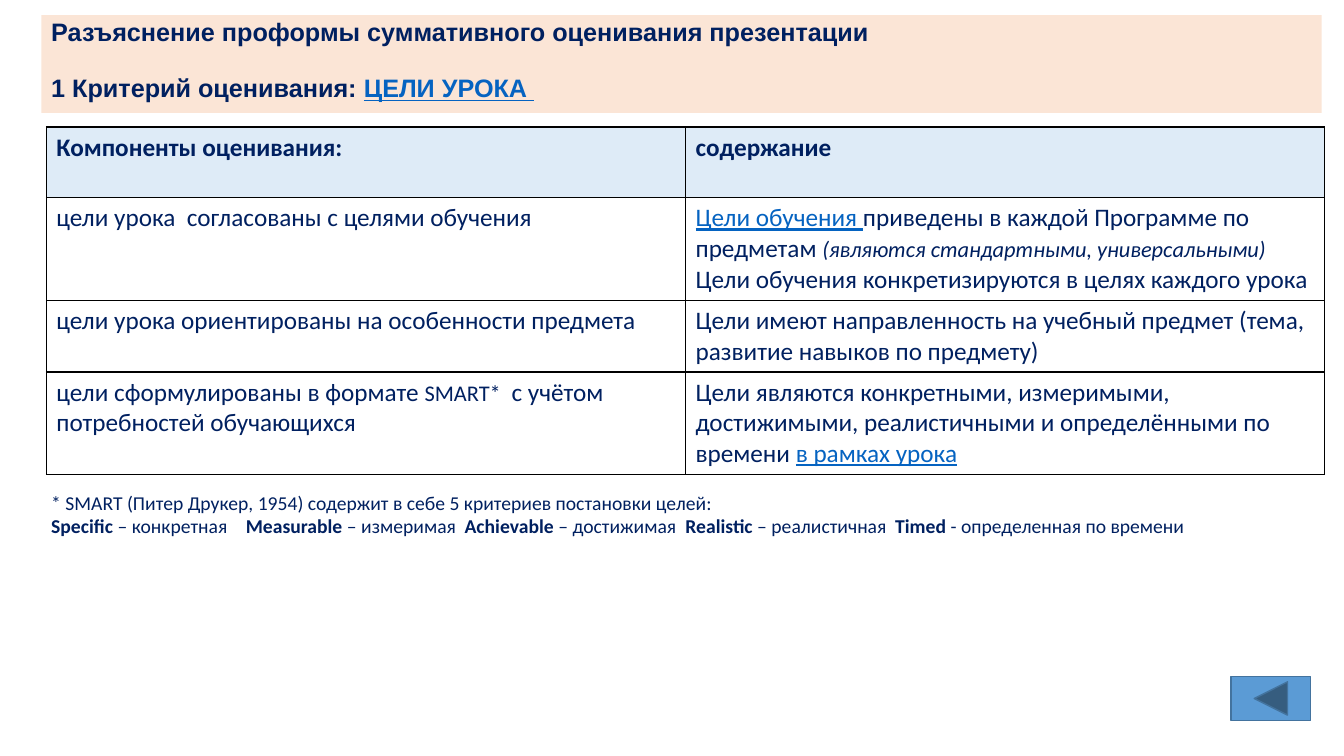
import lxml.etree
import pptx
import pptx.dml.color
import pptx.enum.shapes
import pptx.enum.text
import pptx.oxml.ns
import pptx.util

Inches = pptx.util.Inches
Pt = pptx.util.Pt
COLORS = {
    "navy": "002060", "link": "0563C1", "peach": "FBE5D6", "header": "DEEBF7",
    "button": "5B9BD5", "button_line": "43739E", "border": "000000",
}
BOLD = {"bold": True}
LINK = {"color": "link", "underline": True}


def rgb(name):
    return pptx.dml.color.RGBColor.from_string(COLORS[name])


def add_child(parent, tag, **attributes):
    return lxml.etree.SubElement(parent, pptx.oxml.ns.qn(tag), **attributes)


class SlideBuilder:
    def __init__(self, slide, font="Calibri"):
        self.slide = slide
        self.font = font

    def fill_text(self, frame, paragraphs, size=18, font=None):
        frame.word_wrap = True
        for index, runs in enumerate(paragraphs):
            paragraph = frame.add_paragraph() if index else frame.paragraphs[0]
            paragraph.alignment = pptx.enum.text.PP_ALIGN.LEFT
            for text, style in runs:
                run = paragraph.add_run()
                run.text = text
                run.font.name = font or self.font
                run.font.size = Pt(style.get("size", size))
                run.font.bold = style.get("bold", False)
                run.font.italic = style.get("italic", False)
                run.font.underline = style.get("underline", False)
                run.font.color.rgb = rgb(style.get("color", "navy"))

    def shape(self, kind, box, fill, line=None):
        shape = self.slide.shapes.add_shape(kind, *map(Inches, box))
        shape.shadow.inherit = False
        shape.fill.solid()
        shape.fill.fore_color.rgb = rgb(fill)
        if line:
            shape.line.color.rgb = rgb(line)
            shape.line.width = Pt(1)
        else:
            shape.line.fill.background()
        return shape

    def heading(self, box, paragraphs):
        kind = pptx.enum.shapes.MSO_SHAPE.RECTANGLE
        frame = self.shape(kind, box, "peach").text_frame
        frame.vertical_anchor = pptx.enum.text.MSO_ANCHOR.MIDDLE
        frame.margin_bottom = Inches(0.1)
        self.fill_text(frame, paragraphs, font="Arial")
        for paragraph in frame.paragraphs:
            paragraph.line_spacing = 0.9
        frame.paragraphs[-1].space_before = Pt(20.5)

    def text(self, box, paragraphs, size, tabs):
        frame = self.slide.shapes.add_textbox(*map(Inches, box)).text_frame
        self.fill_text(frame, paragraphs, size)
        properties = frame.paragraphs[-1]._p.get_or_add_pPr()
        tab_list = add_child(properties, "a:tabLst")
        for position in tabs:
            add_child(tab_list, "a:tab", pos=str(Inches(position)), algn="l")

    def border(self, cell):
        properties = cell._tc.get_or_add_tcPr()
        for side in "LRTB":
            line = add_child(properties, f"a:ln{side}", w=str(Pt(1)))
            fill = add_child(line, "a:solidFill")
            add_child(fill, "a:srgbClr", val=COLORS["border"])

    def table(self, box, heights, rows):
        columns = len(rows[0])
        table = self.slide.shapes.add_table(len(rows), columns, *map(Inches, box)).table
        table.horz_banding = False
        table.first_row = False
        for row_index, (height, row) in enumerate(zip(heights, rows)):
            table.rows[row_index].height = Inches(height)
            for column_index, paragraphs in enumerate(row):
                cell = table.cell(row_index, column_index)
                self.border(cell)
                if row_index:
                    cell.fill.background()
                else:
                    cell.fill.solid()
                    cell.fill.fore_color.rgb = rgb("header")
                self.fill_text(cell.text_frame, paragraphs)


def main():
    presentation = pptx.Presentation()
    presentation.slide_width = Inches(13.33)
    presentation.slide_height = Inches(7.5)
    slide = presentation.slides.add_slide(presentation.slide_layouts[6])
    builder = SlideBuilder(slide)

    builder.heading((0.41, 0.15, 12.7, 0.97), [
        [("Разъяснение проформы суммативного оценивания презентации", BOLD)],
        [("1 Критерий оценивания: ", BOLD), ("ЦЕЛИ УРОКА ", {**LINK, **BOLD})],
    ])

    builder.table((0.46, 1.26, 12.68, 3.45), (0.7, 1.02, 0.71, 1.02), [
        ([[("Компоненты оценивания:", BOLD)]], [[("содержание", BOLD)]]),
        (
            [[("цели урока  согласованы с целями обучения", {})]],
            [
                [
                    ("Цели обучения ", LINK),
                    ("приведены в каждой Программе по предметам ", {}),
                    ("(являются стандартными, универсальными)", {"size": 16, "italic": True}),
                ],
                [("Цели обучения конкретизируются в целях каждого урока", {})],
            ],
        ),
        (
            [[("цели урока ориентированы на особенности предмета", {})]],
            [[("Цели имеют направленность на учебный предмет (тема, "
               "развитие навыков по предмету)", {})]],
        ),
        (
            [[
                ("цели сформулированы в формате ", {}),
                ("SMART* ", {"size": 16}),
                (" с учётом потребностей обучающихся", {}),
            ]],
            [[
                ("Цели являются конкретными, измеримыми, достижимыми, "
                 "реалистичными и определёнными по времени ", {}),
                ("в рамках урока", LINK),
            ]],
        ),
    ])

    builder.text((0.41, 4.82, 12.73, 0.57), [
        [("* SMART (Питер Друкер, 1954) содержит в себе 5 критериев постановки целей:", {})],
        [
            ("Specific ", BOLD), ("– конкретная\t", {}),
            ("Measurable", BOLD), (" – измеримая\t", {}),
            ("Achievable", BOLD), (" – достижимая\t", {}),
            ("Realistiс", BOLD), (" – реалистичная\t", {}),
            ("Timed ", BOLD), ("- определенная по времени", {}),
        ],
    ], size=14, tabs=(1.93, 4.1, 6.29, 8.37))

    back_button = pptx.enum.shapes.MSO_SHAPE.ACTION_BUTTON_BACK_OR_PREVIOUS
    builder.shape(back_button, (12.21, 6.71, 0.79, 0.44), "button", "button_line")
    presentation.save("out.pptx")


if __name__ == "__main__":
    main()
